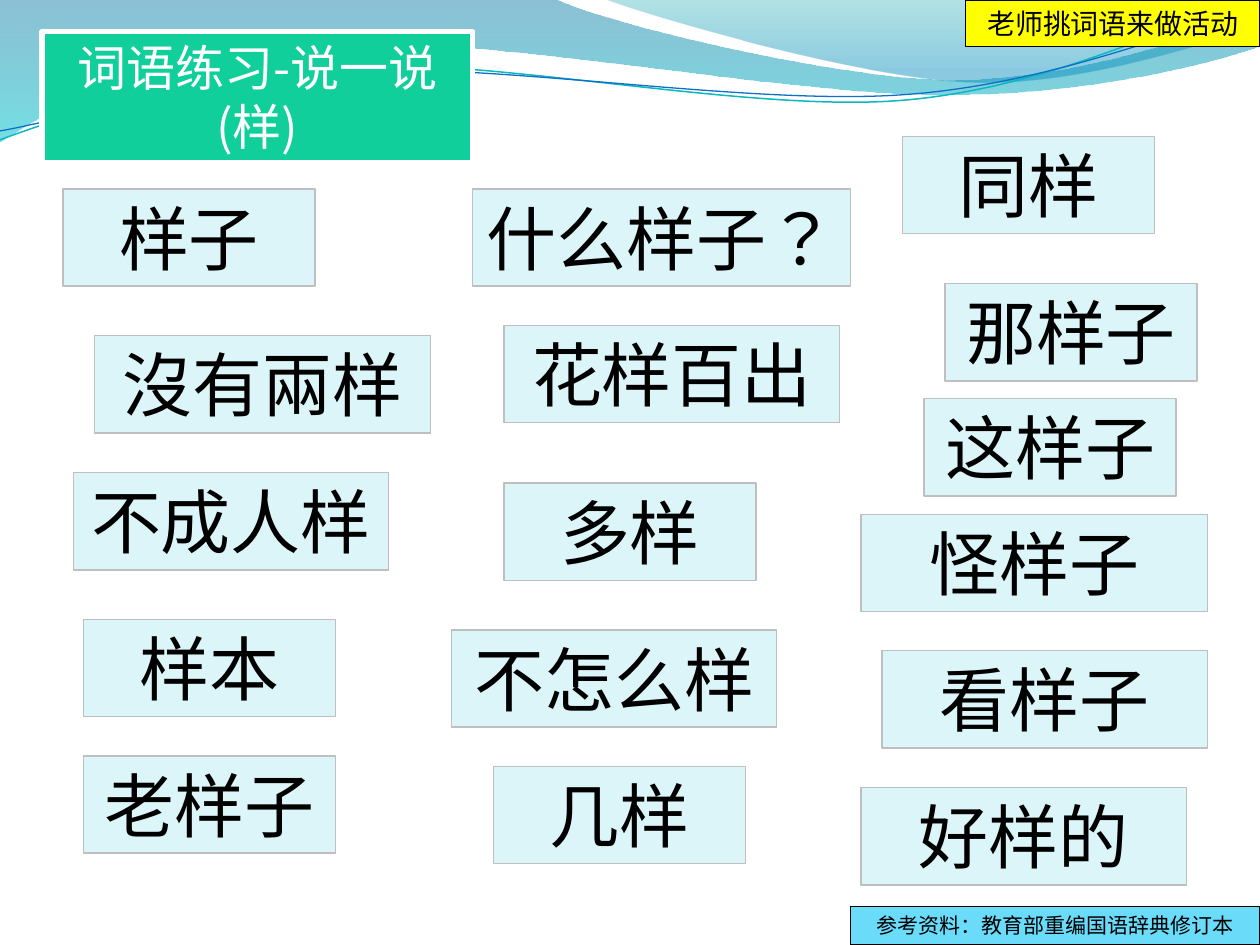
from lxml import etree
from pptx import Presentation, util as u
from pptx.dml.color import RGBColor
from pptx.enum import lang, shapes, text
from pptx.oxml.ns import qn

FONT = "Noto Sans CJK SC"
COLOURS = {
    "card": "DBF5F9", "card_edge": "BFBFBF", "title": "10CF9B",
    "white": "FFFFFF", "black": "000000", "note": "FFFF00", "source": "6BDBFA",
    "deep": "0074A1", "aqua": "00C6CF", "teal": "00A1A9", "blue": "008BBF",
    "teal_line": "0AB8BF", "blue_line": "0F6FC6",
}
CARD_HEIGHT = 1.96
CARDS = [
    ("老样子", 1.69, 15.24, 5.08), ("不成人样", 1.48, 9.53, 6.35),
    ("几样", 9.95, 15.45, 5.08), ("样子", 1.27, 3.81, 5.08),
    ("那样子", 19.05, 5.72, 5.08), ("多样", 10.16, 9.74, 5.08),
    ("同样", 18.2, 2.75, 5.08), ("沒有兩样", 1.91, 6.77, 6.77),
    ("怪样子", 17.36, 10.37, 6.99), ("看样子", 17.78, 13.12, 6.56),
    ("好样的", 17.36, 15.88, 6.56), ("不怎么样", 9.1, 12.7, 6.56),
    ("这样子", 18.63, 8.04, 5.08), ("样本", 1.69, 12.49, 5.08),
    ("花样百出", 10.16, 6.56, 6.77),
]
BROAD_WAVE = [
    (0, 0), (11.18, -0.03), (12.09, 0.43, 16.87, 1.6, 19.25, 1.6),
    (21.67, 1.6, 24.33, 0.66, 25.4, 0.23), (25.43, 0.91),
    (24.97, 1.12, 22.1, 1.93, 18.95, 1.91), (15.8, 1.91, 9.7, 0.71, 6.53, 0.86),
    (3.28, 0.91, 1.17, 2.11, -0.03, 2.87),
]
RIGHT_WAVE = [
    (12.17, -0.03), (12.93, 0.28, 17.32, 1.57, 19.53, 1.65),
    (21.74, 1.75, 24.41, 0.81, 25.4, 0.53), (25.4, 0),
]
TEAL_CURVE = [
    (0, 2.82), (1.22, 2.36, 4.01, 1.45, 7.04, 1.32),
    (10.03, 1.19, 15.06, 2.26, 18.11, 2.03), (21.16, 1.8, 23.83, 0.38, 25.35, -0.05),
]
BLUE_CURVE = [
    (0, 2.64), (1.19, 2.44, 4.17, 1.55, 7.19, 1.42),
    (10.24, 1.3, 15.16, 2.13, 18.21, 1.91), (21.23, 1.7, 23.9, 0.53, 25.4, 0.15),
]


def rgb(name):
    """Return the named colour."""
    return RGBColor.from_string(COLOURS[name])


def bend(shape, steps):
    """Join the points of each six-number step into one Bézier segment."""
    lines = iter(list(shape._element.iter(qn("a:lnTo"))))
    for step in steps[1:]:
        segment = next(lines)
        if len(step) == 6:
            segment.tag
            curve = etree.Element(qn("a:cubicBezTo"))
            segment.addprevious(curve)
            for line in (segment, next(lines), next(lines)):
                curve.append(line[0])
                line.getparent().remove(line)


def write(shape, wording, size=40, colour="black", language=None):
    """Put centred text into a shape."""
    frame = shape.text_frame
    frame.word_wrap = True
    frame.auto_size = text.MSO_AUTO_SIZE.SHAPE_TO_FIT_TEXT
    frame.vertical_anchor = text.MSO_ANCHOR.TOP
    paragraph = frame.paragraphs[0]
    paragraph.alignment = text.PP_ALIGN.CENTER
    run = paragraph.add_run()
    run.text = wording
    run.font.size = u.Pt(size)
    run.font.name = FONT
    run.font.color.rgb = rgb(colour)
    run.font.language_id = language
    etree.SubElement(run.font._element, qn("a:ea"), typeface=FONT)


class SlideWriter:
    """Holds the style and the current slide."""

    def __init__(self, slide):
        """Keep the slide to draw on."""
        self.slide = slide

    def outline(self, steps, close):
        """Add a freeform along straight and Bézier steps."""
        points = [(u.Cm(x), u.Cm(y)) for step in steps for x, y in zip(step[::2], step[1::2])]
        builder = self.slide.shapes.build_freeform(*points[0])
        builder.add_line_segments(points[1:], close=close)
        shape = builder.convert_to_shape()
        shape.shadow.inherit = False
        bend(shape, steps)
        return shape

    def wave(self, steps, stops):
        """Add a wave with a see-through downward gradient."""
        shape = self.outline(steps, True)
        shape.line.fill.background()
        shape.fill.gradient()
        shape.fill.gradient_angle = 270
        for stop, (position, colour, opacity) in zip(shape.fill.gradient_stops, stops):
            stop.position = position
            stop.color.rgb = rgb(colour)
            tint = stop._gs.find(qn("a:srgbClr"))
            etree.SubElement(tint, qn("a:alpha"), val=str(opacity * 1000))

    def curve(self, steps, colour, weight):
        """Add a thin open curve."""
        shape = self.outline(steps, False)
        shape.fill.background()
        shape.line.color.rgb = rgb(colour)
        shape.line.width = u.Pt(weight)

    def box(self, wording, left, top, width, height=CARD_HEIGHT, fill="card",
            edge="card_edge", weight=0.75, **style):
        """Add a filled rectangle with text."""
        shape = self.slide.shapes.add_shape(
            shapes.MSO_SHAPE.RECTANGLE, *map(u.Cm, (left, top, width, height)))
        shape.shadow.inherit = False
        shape.fill.solid()
        shape.fill.fore_color.rgb = rgb(fill)
        shape.line.color.rgb = rgb(edge)
        shape.line.width = u.Pt(weight)
        write(shape, wording, **style)


def main():
    """Build the vocabulary slide."""
    deck = Presentation()
    deck.slide_width, deck.slide_height = u.Cm(25.4), u.Cm(19.05)
    writer = SlideWriter(deck.slides.add_slide(deck.slide_layouts[6]))

    writer.wave(BROAD_WAVE, [(0, "deep", 45), (1, "aqua", 55)])
    writer.wave(RIGHT_WAVE, [(0, "teal", 30), (0.8, "blue", 45)])
    writer.curve(TEAL_CURVE, "teal_line", 0.85)
    writer.curve(BLUE_CURVE, "blue_line", 0.75)

    for card in CARDS:
        writer.box(*card)
    writer.box("什么样子？", 9.53, 3.81, 7.62,
               language=lang.MSO_LANGUAGE_ID.TRADITIONAL_CHINESE)
    writer.box("词语练习-说一说(样)", 0.85, 0.64, 8.68, 2.64, fill="title",
               edge="white", weight=3, size=28, colour="white")
    writer.box("参考资料：教育部重编国语辞典修订本", 17.14, 18.28, 8.26, 0.77,
               fill="source", edge="black", size=12)
    writer.box("老师挑词语来做活动", 19.47, 0, 5.93, 0.94, fill="note", edge="black", size=16)

    deck.save("out.pptx")


if __name__ == "__main__":
    main()
